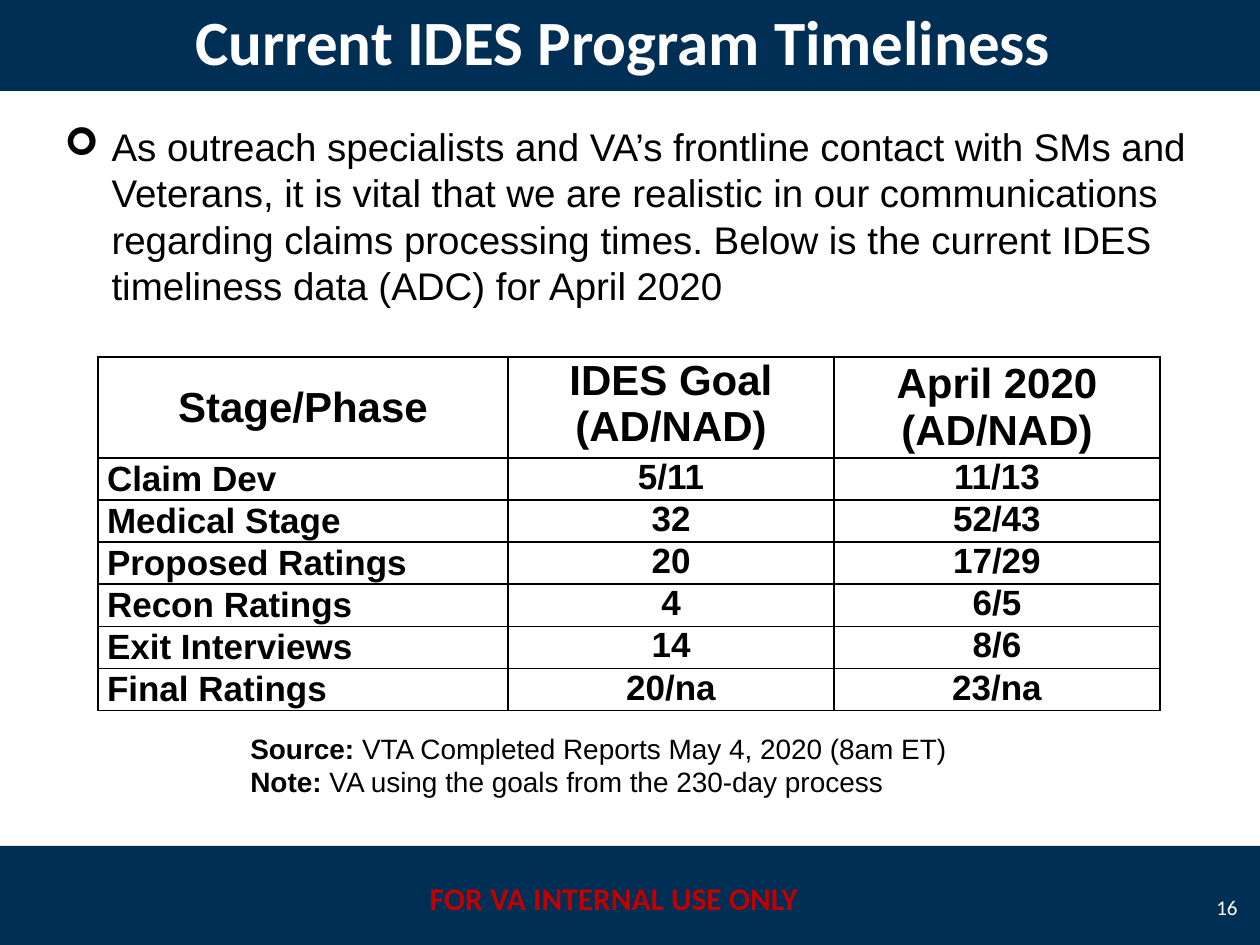
"""Builds the slide on current IDES program timeliness."""
import lxml.etree
import pptx
import pptx.dml.color
import pptx.enum.shapes
import pptx.enum.text
import pptx.oxml.ns
import pptx.util

PX = 914400 / 126
ALIGN = pptx.enum.text.PP_ALIGN
ANCHOR = pptx.enum.text.MSO_ANCHOR
NAVY, WHITE, BLACK, RED = "002F56", "FFFFFF", "000000", "C00000"


def px(length):
    return pptx.util.Emu(round(length * PX))


def color(value):
    return pptx.dml.color.RGBColor.from_string(value)


def add_xml(parent, tag, **attributes):
    return lxml.etree.SubElement(parent, pptx.oxml.ns.qn(tag), attributes)


class SlideBuilder:
    def __init__(self, slide, heading_font, body_font):
        self.slide = slide
        self.heading_font = heading_font
        self.body_font = body_font

    def place(self, shape, box):
        shape.left, shape.top, shape.width, shape.height = map(px, box)

    def style(self, paragraph, size, font, hue=BLACK, bold=False, align=ALIGN.LEFT):
        paragraph.alignment = align
        paragraph.space_before = pptx.util.Pt(0)
        for run in paragraph.runs:
            run.font.size = pptx.util.Pt(size)
            run.font.name = font
            run.font.bold = bold
            run.font.color.rgb = color(hue)

    def band(self, *box):
        shape = self.slide.shapes.add_shape(
            pptx.enum.shapes.MSO_SHAPE.RECTANGLE, *map(px, box))
        shape.shadow.inherit = False
        shape.fill.solid()
        shape.fill.fore_color.rgb = color(NAVY)
        shape.line.fill.background()

    def placeholder(self, index, text, box, anchor):
        shape = self.slide.placeholders[index]
        self.place(shape, box)
        shape._element.getparent().append(shape._element)
        frame = shape.text_frame
        frame.text = text
        frame.word_wrap = True
        frame.auto_size = pptx.enum.text.MSO_AUTO_SIZE.NONE
        frame.vertical_anchor = anchor
        return frame.paragraphs[0]

    def title(self, text, box):
        paragraph = self.placeholder(0, text, box, ANCHOR.MIDDLE)
        self.style(paragraph, 36, self.heading_font, WHITE, True, ALIGN.CENTER)

    def bullet(self, text, box):
        paragraph = self.placeholder(1, text, box, ANCHOR.TOP)
        properties = paragraph._p.get_or_add_pPr()
        properties.set("marL", str(px(47)))
        properties.set("indent", str(px(-47)))
        add_xml(properties, "a:buFont", typeface="Wingdings")
        add_xml(properties, "a:buChar", char="➢")
        self.style(paragraph, 22, self.body_font)

    def text_box(self, box, anchor=ANCHOR.TOP):
        frame = self.slide.shapes.add_textbox(*map(px, box)).text_frame
        frame.word_wrap = True
        frame.vertical_anchor = anchor
        return frame

    def label(self, text, box, size, hue, bold, align, anchor=ANCHOR.TOP):
        paragraph = self.text_box(box, anchor).paragraphs[0]
        paragraph.text = text
        self.style(paragraph, size, self.heading_font, hue, bold, align)

    def remarks(self, entries, box):
        frame = self.text_box(box)
        for number, (lead, detail) in enumerate(entries):
            paragraph = frame.add_paragraph() if number else frame.paragraphs[0]
            paragraph._p.get_or_add_pPr().set("marL", str(px(141)))
            paragraph.text = lead
            paragraph.add_run().text = detail
            self.style(paragraph, 16, self.body_font)
            paragraph.runs[0].font.bold = True

    def border(self, cell):
        properties = cell._tc.get_or_add_tcPr()
        for side in ("a:lnL", "a:lnR", "a:lnT", "a:lnB"):
            line = add_xml(properties, side, w=str(pptx.util.Pt(1)))
            add_xml(add_xml(line, "a:solidFill"), "a:srgbClr", val=BLACK)

    def table(self, rows, left, top, widths, header_height, row_height):
        heights = [header_height] + [row_height] * (len(rows) - 1)
        table = self.slide.shapes.add_table(
            len(rows), len(widths), px(left), px(top),
            px(sum(widths)), px(sum(heights))).table
        table.first_row = table.horz_banding = False
        for column, width in zip(table.columns, widths):
            column.width = px(width)
        for r, (values, height) in enumerate(zip(rows, heights)):
            table.rows[r].height = px(height)
            for c, value in enumerate(values):
                cell = table.cell(r, c)
                self.border(cell)
                cell.fill.background()
                cell.margin_left = cell.margin_right = px(9)
                cell.margin_top = cell.margin_bottom = 0
                middle = c == 0 or (r == 0 and c == 2)
                cell.vertical_anchor = ANCHOR.MIDDLE if middle else ANCHOR.TOP
                cell.text = value
                align = ALIGN.LEFT if r and c == 0 else ALIGN.CENTER
                self.style(cell.text_frame.paragraphs[0], 20 if r else 24,
                           self.body_font, bold=True, align=align)


def main():
    presentation = pptx.Presentation()
    presentation.slide_width, presentation.slide_height = px(1260), px(945)
    slide = presentation.slides.add_slide(presentation.slide_layouts[1])
    builder = SlideBuilder(slide, "Calibri", "Arial")

    title_box = (0, -10, 1260, 101)
    builder.band(0, 846, 1260, 101)
    builder.band(*title_box)
    builder.label("FOR VA INTERNAL USE ONLY", (409, 873, 410, 50),
                  18, RED, True, ALIGN.CENTER)
    builder.label("16", (1197, 882, 53, 50),
                  12, WHITE, False, ALIGN.RIGHT, ANCHOR.MIDDLE)
    builder.title("Current IDES Program Timeliness ", title_box)
    builder.bullet(
        "As outreach specialists and VA’s frontline contact with SMs and "
        "Veterans, it is vital that we are realistic in our communications "
        "regarding claims processing times. Below is the current IDES "
        "timeliness data (ADC) for April 2020", (52, 117, 1155, 199))
    builder.remarks([
        ("Source:", " VTA Completed Reports May 4, 2020 (8am ET)"),
        ("Note:", " VA using the goals from the 230-day process"),
    ], (97, 725, 987, 81))

    timeliness = [
        ("Stage/Phase", "IDES Goal (AD/NAD)", "April 2020 (AD/NAD)"),
        ("Claim Dev", "5/11", "11/13"),
        ("Medical Stage", "32", "52/43"),
        ("Proposed Ratings", "20", "17/29"),
        ("Recon Ratings", "4", "6/5"),
        ("Exit Interviews", "14", "8/6"),
        ("Final Ratings", "20/na", "23/na"),
    ]
    builder.table(timeliness, 98, 357, (410, 326, 326), 101, 42)
    presentation.save("out.pptx")


if __name__ == "__main__":
    main()
